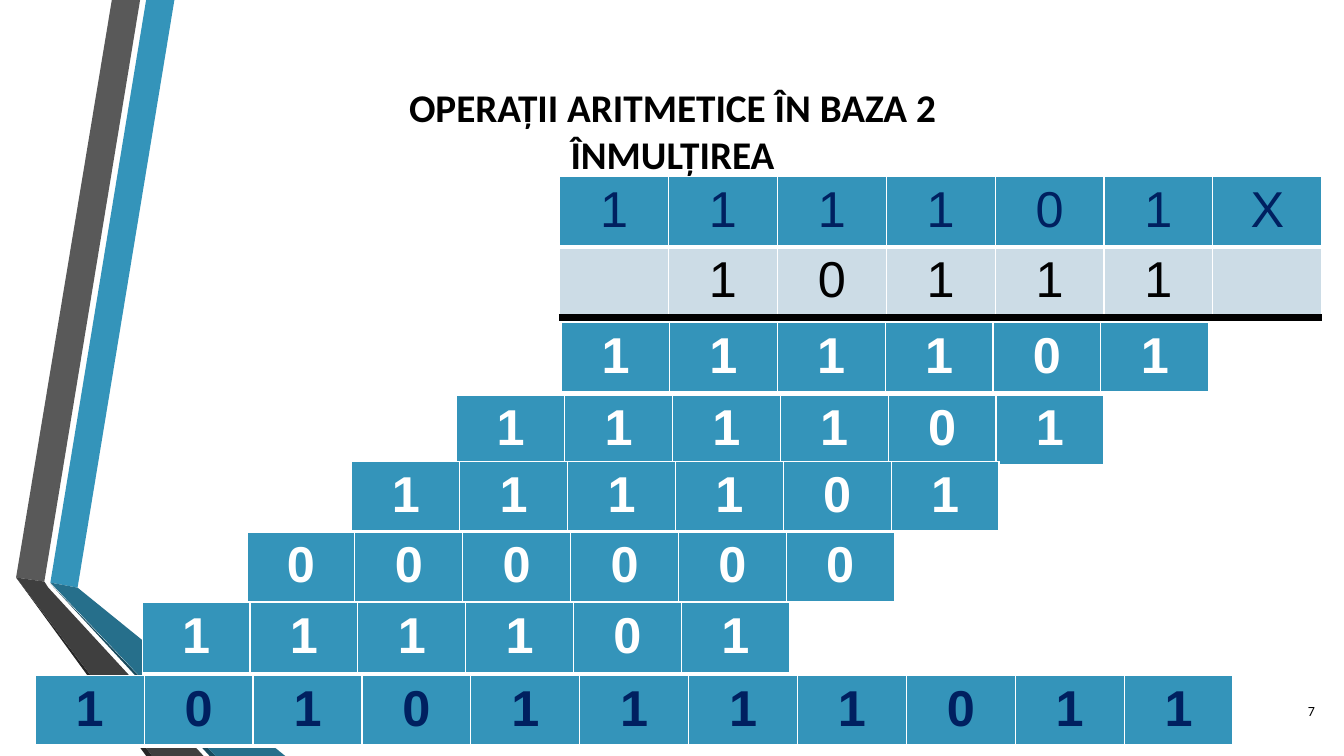
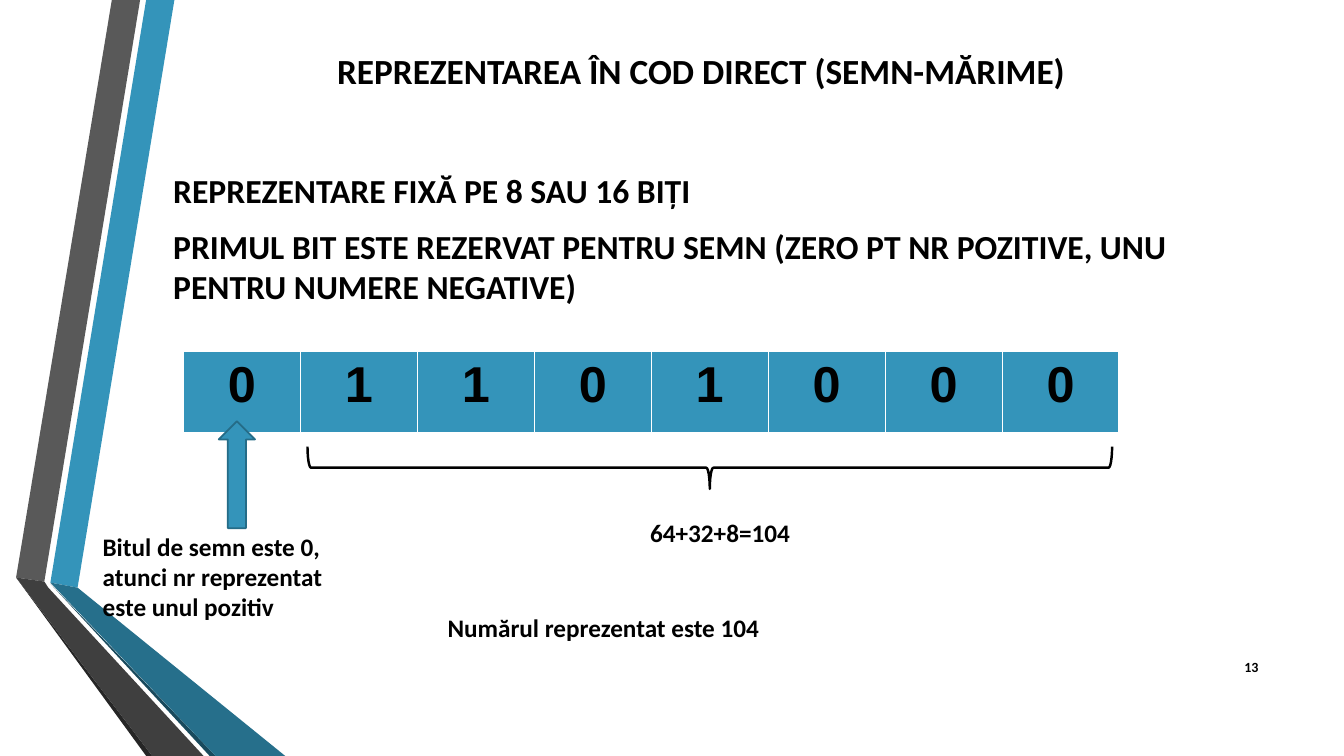
"""Build two slides on binary multiplication and sign-magnitude representation."""
from dataclasses import dataclass

from lxml import etree
from pptx import Presentation
from pptx.dml.color import RGBColor
from pptx.enum.shapes import MSO_SHAPE
from pptx.enum.text import MSO_ANCHOR, PP_ALIGN
from pptx.oxml.ns import qn
from pptx.slide import Slide
from pptx.util import Inches, Pt

LEFT, CENTER, RIGHT = PP_ALIGN.LEFT, PP_ALIGN.CENTER, PP_ALIGN.RIGHT
TOP, MIDDLE = MSO_ANCHOR.TOP, MSO_ANCHOR.MIDDLE
UP_ARROW, LEFT_BRACE = MSO_SHAPE.UP_ARROW, MSO_SHAPE.LEFT_BRACE


@dataclass(frozen=True)
class Theme:
    accent: str = "3494BA"
    accent_line: str = "256C87"
    accent_dark: str = "266F8B"
    accent_deep: str = "194A5D"
    gray: str = "595959"
    gray_dark: str = "3F3F3F"
    gray_deep: str = "262626"
    pale: str = "CCDCE6"
    navy: str = "002060"
    black: str = "000000"
    white: str = "FFFFFF"
    text_font: str = "Calibri"
    digit_font: str = "Arial"
    title_size: float = 28
    long_title_size: float = 25.2
    body_size: float = 24
    note_size: float = 18
    number_size: float = 10
    digit_size: float = 36
    body_gap: float = 10.8


THEME = Theme()


@dataclass(frozen=True)
class Band:
    color: str
    points: tuple[tuple[float, float], ...]


@dataclass(frozen=True)
class Label:
    text: str
    left: float
    top: float
    width: float
    height: float
    size: float
    align: PP_ALIGN = LEFT
    anchor: MSO_ANCHOR = TOP
    bold: bool = True
    gap: float = 0


@dataclass(frozen=True)
class BitRow:
    bits: str
    color: str = THEME.white
    fill: str = THEME.accent
    bold: bool = True
    bottom_color: str = THEME.white
    bottom_width: float = 3


@dataclass(frozen=True)
class BitTable:
    left: float
    top: float
    column: float
    rows: tuple[BitRow, ...]
    height: float = 0.65


BANDS = (
    Band(THEME.accent, ((0.5, 5.78), (0.77, 5.83), (1.73, 0), (1.45, 0))),
    Band(THEME.gray, ((1.39, 0), (1.11, 0), (0.16, 5.73), (0.44, 5.77))),
    Band(THEME.gray_deep, ((0.16, 5.73), (1.45, 7.5), (1.51, 7.5))),
    Band(THEME.accent_deep, ((0.5, 5.79), (2.08, 7.5), (2.14, 7.5))),
    Band(THEME.accent_dark, ((0.5, 5.78), (2.14, 7.5), (2.83, 7.5), (0.77, 5.83))),
    Band(THEME.gray_dark, ((2.02, 7.5), (0.48, 5.83), (0.44, 5.77), (0.16, 5.73), (1.51, 7.5))),
)

PRODUCT_LEFT, PRODUCT_STEP = 5.57, 1.04
PRODUCTS = (
    (3.2, "111101"),
    (3.92, "111101"),
    (4.58, "111101"),
    (5.28, "000000"),
    (5.98, "111101"),
)

MULTIPLICATION_LABELS = (
    Label("OPERAȚII ARITMETICE ÎN BAZA 2\nÎNMULȚIREA", 0.92, 0.57, 11.5, 1.45,
          THEME.title_size, CENTER, MIDDLE),
    Label("7", 12.54, 6.85, 0.6, 0.4, THEME.number_size, RIGHT, MIDDLE, bold=False),
)
SIGN_LABELS = (
    Label("REPREZENTAREA ÎN COD DIRECT (SEMN-MĂRIME)", 0.92, 0.4, 12.07, 0.6,
          THEME.long_title_size, CENTER, MIDDLE),
    Label("13", 11.98, 6.42, 0.6, 0.4, THEME.number_size, RIGHT, MIDDLE),
    Label("REPREZENTARE FIXĂ PE 8 SAU 16 BIȚI\n"
          "PRIMUL BIT ESTE REZERVAT PENTRU SEMN (ZERO PT NR POZITIVE, UNU PENTRU NUMERE NEGATIVE)",
          1.62, 1.64, 10.96, 1.5, THEME.body_size, gap=THEME.body_gap),
    Label("Bitul de semn este 0, atunci nr reprezentat este unul pozitiv",
          0.92, 5.22, 2.76, 1.01, THEME.note_size),
    Label("64+32+8=104", 6.35, 5.08, 2.76, 0.4, THEME.note_size),
    Label("Numărul reprezentat este 104", 4.34, 6.03, 6.11, 0.4, THEME.note_size),
)


def rgb(color: str) -> RGBColor:
    return RGBColor.from_string(color)


def style_font(font, name: str, size: float, color: str, bold: bool) -> None:
    font.name, font.size, font.bold = name, Pt(size), bold
    font.color.rgb = rgb(color)


def draw_band(page: Slide, band: Band) -> None:
    start, *others = [(Inches(x), Inches(y)) for x, y in band.points]
    builder = page.shapes.build_freeform(*start, scale=1.0)
    builder.add_line_segments(others, close=True)
    shape = builder.convert_to_shape()
    shape.shadow.inherit = False
    shape.fill.solid()
    shape.fill.fore_color.rgb = rgb(band.color)
    shape.line.fill.background()


def draw_label(page: Slide, label: Label) -> None:
    box = page.shapes.add_textbox(Inches(label.left), Inches(label.top),
                                  Inches(label.width), Inches(label.height))
    frame = box.text_frame
    frame.word_wrap = True
    frame.vertical_anchor = label.anchor
    frame.text = label.text
    for index, para in enumerate(frame.paragraphs):
        para.alignment = label.align
        if index and label.gap:
            para.space_before = Pt(label.gap)
        for span in para.runs:
            style_font(span.font, THEME.text_font, label.size, THEME.black, label.bold)


def set_borders(cell, row: BitRow) -> None:
    properties = cell._tc.get_or_add_tcPr()
    edges = [(side, THEME.white, 1) for side in ("lnL", "lnR", "lnT")]
    edges.append(("lnB", row.bottom_color, row.bottom_width))
    for index, (side, color, width) in enumerate(edges):
        line = etree.Element(qn(f"a:{side}"), w=str(Pt(width)))
        fill = etree.SubElement(line, qn("a:solidFill"))
        etree.SubElement(fill, qn("a:srgbClr"), val=color)
        properties.insert(index, line)


def draw_bits(page: Slide, bits: BitTable) -> None:
    count = len(bits.rows[0].bits)
    table = page.shapes.add_table(
        len(bits.rows), count, Inches(bits.left), Inches(bits.top),
        Inches(bits.column * count), Inches(bits.height * len(bits.rows))).table
    table.first_row = table.horz_banding = False
    for row_index, row in enumerate(bits.rows):
        for column_index, bit in enumerate(row.bits):
            cell = table.cell(row_index, column_index)
            cell.fill.solid()
            cell.fill.fore_color.rgb = rgb(row.fill)
            set_borders(cell, row)
            cell.text = bit.strip()
            para = cell.text_frame.paragraphs[0]
            para.alignment = CENTER
            style_font(para.font, THEME.digit_font, THEME.digit_size, row.color, row.bold)
            for span in para.runs:
                style_font(span.font, THEME.digit_font, THEME.digit_size, row.color, row.bold)


def draw_sign_marks(page: Slide) -> None:
    arrow = page.shapes.add_shape(UP_ARROW, Inches(2.17), Inches(4.18), Inches(0.36), Inches(1.06))
    arrow.fill.solid()
    arrow.fill.fore_color.rgb = rgb(THEME.accent)
    brace = page.shapes.add_shape(LEFT_BRACE, Inches(6.83), Inches(0.65), Inches(0.42), Inches(7.98))
    brace.rotation = 270
    brace.fill.background()
    for shape, color, width in ((arrow, THEME.accent_line, 1.25), (brace, THEME.black, 1.75)):
        shape.shadow.inherit = False
        shape.line.color.rgb = rgb(color)
        shape.line.width = Pt(width)


def add_page(deck, labels: tuple[Label, ...], tables: tuple[BitTable, ...]) -> Slide:
    page = deck.slides.add_slide(deck.slide_layouts[6])
    for band in BANDS:
        draw_band(page, band)
    for label in labels:
        draw_label(page, label)
    for bits in tables:
        draw_bits(page, bits)
    return page


def main() -> None:
    deck = Presentation()
    deck.slide_width, deck.slide_height = Inches(13.33), Inches(7.5)
    factors = BitTable(5.55, 1.75, 1.08, (
        BitRow("111101X", THEME.navy, bold=False),
        BitRow(" 10111 ", THEME.black, THEME.pale, False, THEME.black, 6),
    ))
    products = tuple(
        BitTable(PRODUCT_LEFT - PRODUCT_STEP * shift, top, 1.07, (BitRow(bits),))
        for shift, (top, bits) in enumerate(PRODUCTS))
    total = BitTable(0.35, 6.7, 1.08, (BitRow("10101111011", THEME.navy),))
    add_page(deck, MULTIPLICATION_LABELS, (factors, *products, total))
    number = BitTable(1.82, 3.49, 1.16, (BitRow("01101000", THEME.black),), 0.81)
    draw_sign_marks(add_page(deck, SIGN_LABELS, (number,)))
    deck.save("out.pptx")


if __name__ == "__main__":
    main()
